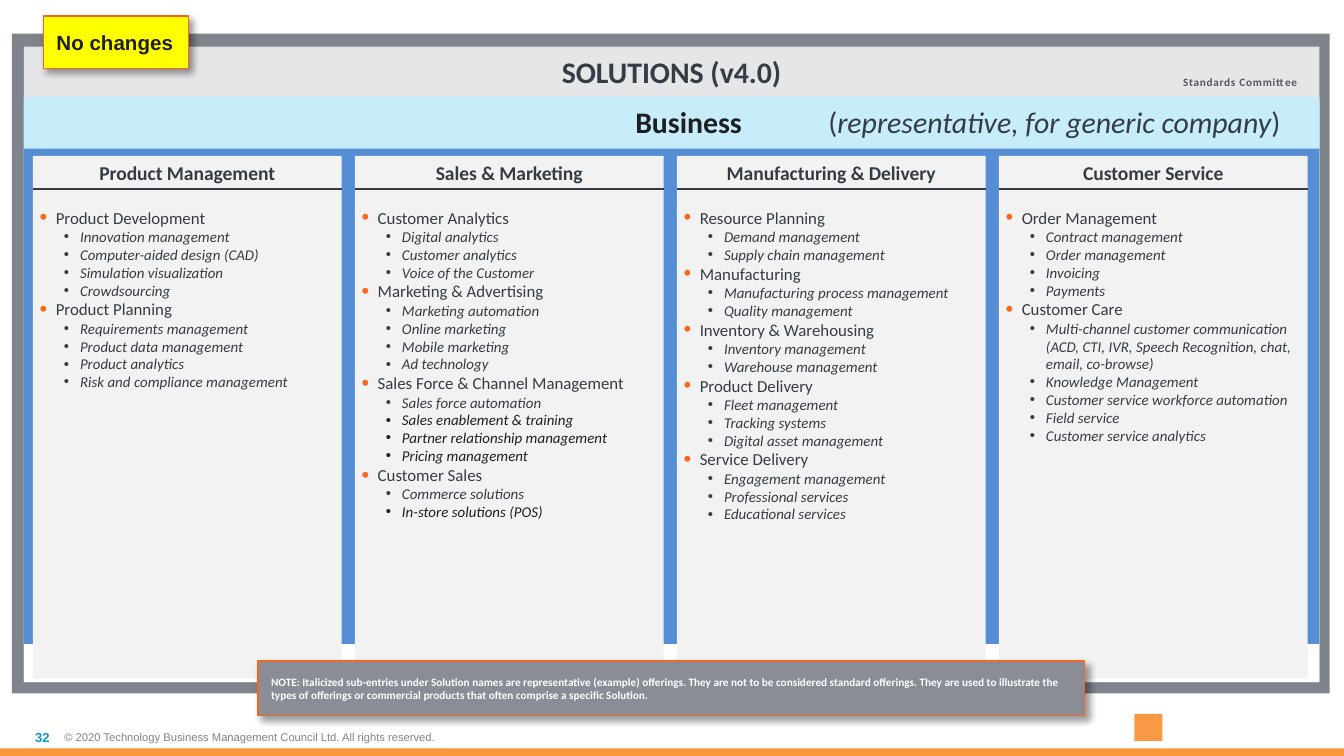
from lxml import etree
from pptx import Presentation
from pptx.dml.color import RGBColor
from pptx.enum.shapes import MSO_CONNECTOR, MSO_SHAPE
from pptx.enum.text import MSO_ANCHOR, MSO_AUTO_SIZE, PP_ALIGN
from pptx.oxml.ns import qn
from pptx.util import Pt

RECTANGLE = MSO_SHAPE.RECTANGLE
STRAIGHT = MSO_CONNECTOR.STRAIGHT
TOP, MIDDLE = MSO_ANCHOR.TOP, MSO_ANCHOR.MIDDLE
LEFT, CENTER, RIGHT = PP_ALIGN.LEFT, PP_ALIGN.CENTER, PP_ALIGN.RIGHT
FIT = MSO_AUTO_SIZE.SHAPE_TO_FIT_TEXT

# Content: each column is a heading and its (solution, offerings) groups
COLUMNS = [
    ("Product Management", [
        ("Product Development", ["Innovation management", "Computer-aided design (CAD)",
                                 "Simulation visualization", "Crowdsourcing"]),
        ("Product Planning", ["Requirements management", "Product data management",
                              "Product analytics", "Risk and compliance management"]),
    ]),
    ("Sales & Marketing", [
        ("Customer Analytics", ["Digital analytics", "Customer analytics",
                                "Voice of the Customer"]),
        ("Marketing & Advertising", ["Marketing automation", "Online marketing",
                                     "Mobile marketing", "Ad technology"]),
        ("Sales Force & Channel Management", ["Sales force automation",
                                              "Sales enablement & training",
                                              "Partner relationship management",
                                              "Pricing management"]),
        ("Customer Sales", ["Commerce solutions", "In-store solutions (POS)"]),
    ]),
    ("Manufacturing & Delivery", [
        ("Resource Planning", ["Demand management", "Supply chain management"]),
        ("Manufacturing", ["Manufacturing process management", "Quality management"]),
        ("Inventory & Warehousing", ["Inventory management", "Warehouse management"]),
        ("Product Delivery", ["Fleet management", "Tracking systems",
                              "Digital asset management"]),
        ("Service Delivery", ["Engagement management", "Professional services",
                              "Educational services"]),
    ]),
    ("Customer Service", [
        ("Order Management", ["Contract management", "Order management", "Invoicing",
                              "Payments"]),
        ("Customer Care", ["Multi-channel customer communication (ACD, CTI, IVR, "
                           "Speech Recognition, chat, email, co-browse)",
                           "Knowledge Management", "Customer service workforce automation",
                           "Field service", "Customer service analytics"]),
    ]),
]
DARK_OFFERINGS = {"Sales enablement & training", "Partner relationship management",
                  "Pricing management", "In-store solutions (POS)"}
NOTE = ("NOTE: Italicized sub-entries under Solution names are representative (example) "
        "offerings. They are not to be considered standard offerings. They are used to "
        "illustrate the types of offerings or commercial products that often comprise a "
        "specific Solution.")
COPYRIGHT = "© 2020 Technology Business Management Council Ltd. All rights reserved."

THEME = {
    "frame": "7E848B", "title": "E5E6E8", "white": "FFFFFF", "blue": "558ED5",
    "band": "C7EDFB", "panel": "F2F2F2", "tag": "FFFF00", "note": "8A8D95",
    "bar": "F89838", "logo": "F89946", "edge": "F26724", "bullet": "FF661C",
    "text": "353C45", "dark": "1E1F21", "muted": "53565C", "number": "0D96C9",
    "body_font": "Calibri", "label_font": "Arial",
    "title_size": 16, "tag_size": 11, "heading_size": 10.5, "solution_size": 9,
    "offering_size": 8, "number_size": 7, "small_size": 6,
}

# Plain areas, back to front: colour and left, top, width, height
PANEL_LEFT, PANEL_WIDTH = 12.8, 694
AREAS = [
    ("bar", (0, 401, 720, 4)),
    ("logo", (607.7, 382.5, 15, 14.5)),
    ("frame", (6.4, 18, 706, 353.5)),
    ("title", (PANEL_LEFT, 25, PANEL_WIDTH, 340.5)),
    ("white", (PANEL_LEFT, 54, PANEL_WIDTH, 311.5)),
    ("blue", (PANEL_LEFT, 79.5, PANEL_WIDTH, 265.5)),
    ("band", (PANEL_LEFT, 52, PANEL_WIDTH, 27.5)),
]
COLUMN_LEFT, COLUMN_PITCH, COLUMN_WIDTH = 17.6, 172.5, 165.5
COLUMN_TOP, COLUMN_HEIGHT, RULE_TOP = 83.6, 280, 101.5

presentation = Presentation()
presentation.slide_width, presentation.slide_height = Pt(720), Pt(405)
slide = presentation.slides.add_slide(presentation.slide_layouts[6])


def color(name):
    return RGBColor.from_string(THEME[name])


def add_element(parent, tag, **attributes):
    return etree.SubElement(parent, qn(tag), {k: str(v) for k, v in attributes.items()})


def add_rectangle(fill, box, edge=None):
    shape = slide.shapes.add_shape(RECTANGLE, *map(Pt, box))
    shape.shadow.inherit = False
    shape.fill.solid()
    shape.fill.fore_color.rgb = color(fill)
    if edge:
        shape.line.color.rgb, shape.line.width = color(edge), Pt(0.75)
    else:
        shape.line.fill.background()
    return shape


def set_frame(shape, margins=(7.2, 3.6, 7.2, 3.6), anchor=TOP, wrap=True, fit=None):
    frame = shape.text_frame
    values = dict(zip(("margin_left", "margin_top", "margin_right", "margin_bottom"),
                      map(Pt, margins)))
    values.update(vertical_anchor=anchor, word_wrap=wrap)
    if fit:
        values["auto_size"] = fit
    for name, value in values.items():
        setattr(frame, name, value)
    return frame


def add_run(paragraph, text, size, ink="text", font="body_font", bold=False, italic=False):
    run = paragraph.add_run()
    run.text = text
    values = {"name": THEME[font], "size": Pt(THEME[size]), "bold": bold, "italic": italic}
    for name, value in values.items():
        setattr(run.font, name, value)
    run.font.color.rgb = color(ink)
    return run


def add_bullet(frame, level, indent, accent=None):
    paragraph = frame.add_paragraph()
    paragraph.level, paragraph.alignment = level, LEFT
    properties = paragraph._p.get_or_add_pPr()
    properties.set("marL", str(Pt(indent)))
    properties.set("indent", str(Pt(-8.6)))
    if accent:
        add_element(add_element(properties, "a:buClr"), "a:srgbClr", val=THEME[accent])
        add_element(properties, "a:buSzPct", val=130000)
    add_element(properties, "a:buFont", typeface="Arial")
    add_element(properties, "a:buChar", char="•")
    return paragraph


def add_label(box, text, align=LEFT, anchor=MIDDLE, wrap=True, **style):
    frame = set_frame(slide.shapes.add_textbox(*map(Pt, box)), (0,) * 4, anchor, wrap)
    frame.paragraphs[0].alignment = align
    return add_run(frame.paragraphs[0], text, **style)


def add_callout(fill, box, text, wrap, **style):
    shape = add_rectangle(fill, box, "edge")
    effects = shape._element.spPr.find(qn("a:effectLst"))
    shadow = add_element(effects, "a:outerShdw", blurRad=Pt(4), dist=Pt(3),
                         dir=45 * 60000, algn="tl", rotWithShape=0)
    add_element(add_element(shadow, "a:srgbClr", val="000000"), "a:alpha", val=40000)
    frame = set_frame(shape, (7.2,) * 4, MIDDLE, wrap, FIT)
    frame.paragraphs[0].alignment = LEFT
    add_run(frame.paragraphs[0], text, bold=True, **style)


# Frame, panels and bands
areas = {fill: add_rectangle(fill, box) for fill, box in AREAS}

# Footer
add_label((34.5, 384.5, 242, 21), COPYRIGHT, size="small_size", ink="frame", font="label_font")
add_label((0, 384.5, 26.5, 21), "32", RIGHT, size="number_size", ink="number",
          font="label_font", bold=True)

# Title and committee name
title = set_frame(areas["title"]).paragraphs[0]
title.alignment = CENTER
add_run(title, "SOLUTIONS (v4.0)", "title_size", bold=True)
committee = add_label((633.8, 40.5, 62.5, 7.2), "Standards Committee", anchor=TOP, wrap=False,
                      size="small_size", ink="muted", bold=True)
committee.font._element.set("spc", "40")

# Business band, laid out on a centre tab and a right tab
business = set_frame(areas["band"]).paragraphs[0]
business.alignment = CENTER
tabs = add_element(business._p.get_or_add_pPr(), "a:tabLst")
for position, align in ((337, "ctr"), (652.3, "r")):
    add_element(tabs, "a:tab", pos=Pt(position), algn=align)
add_run(business, "\tBusiness \t", "title_size", "dark", bold=True)
for text, italic in (("(", False), ("representative, for generic company", True), (")", False)):
    add_run(business, text, "title_size", italic=italic)

# Solution columns
for index, (heading, groups) in enumerate(COLUMNS):
    left = COLUMN_LEFT + index * COLUMN_PITCH
    column = add_rectangle("panel", (left, COLUMN_TOP, COLUMN_WIDTH, COLUMN_HEIGHT))
    frame = set_frame(column, (2.9,) * 4)
    paragraph = frame.paragraphs[0]
    paragraph.alignment, paragraph.space_after = CENTER, Pt(12)
    add_run(paragraph, heading, "heading_size", bold=True)
    for solution, offerings in groups:
        add_run(add_bullet(frame, 1, 9.4, "bullet"), solution, "solution_size")
        for offering in offerings:
            ink = "dark" if offering in DARK_OFFERINGS else "text"
            add_run(add_bullet(frame, 2, 22.4), offering, "offering_size", ink, italic=True)
    rule = slide.shapes.add_connector(STRAIGHT, Pt(left), Pt(RULE_TOP),
                                      Pt(left + COLUMN_WIDTH), Pt(RULE_TOP))
    rule.line.color.rgb, rule.line.width = color("text"), Pt(1)
    add_element(rule._element.spPr, "a:effectLst")

# Callouts on top
add_callout("tag", (23.2, 8.6, 78, 28.2), "No changes", False, size="tag_size", ink="dark",
            font="label_font")
add_callout("note", (138.2, 354.2, 443, 29.2), NOTE, True, size="small_size", ink="white")

presentation.save("out.pptx")
